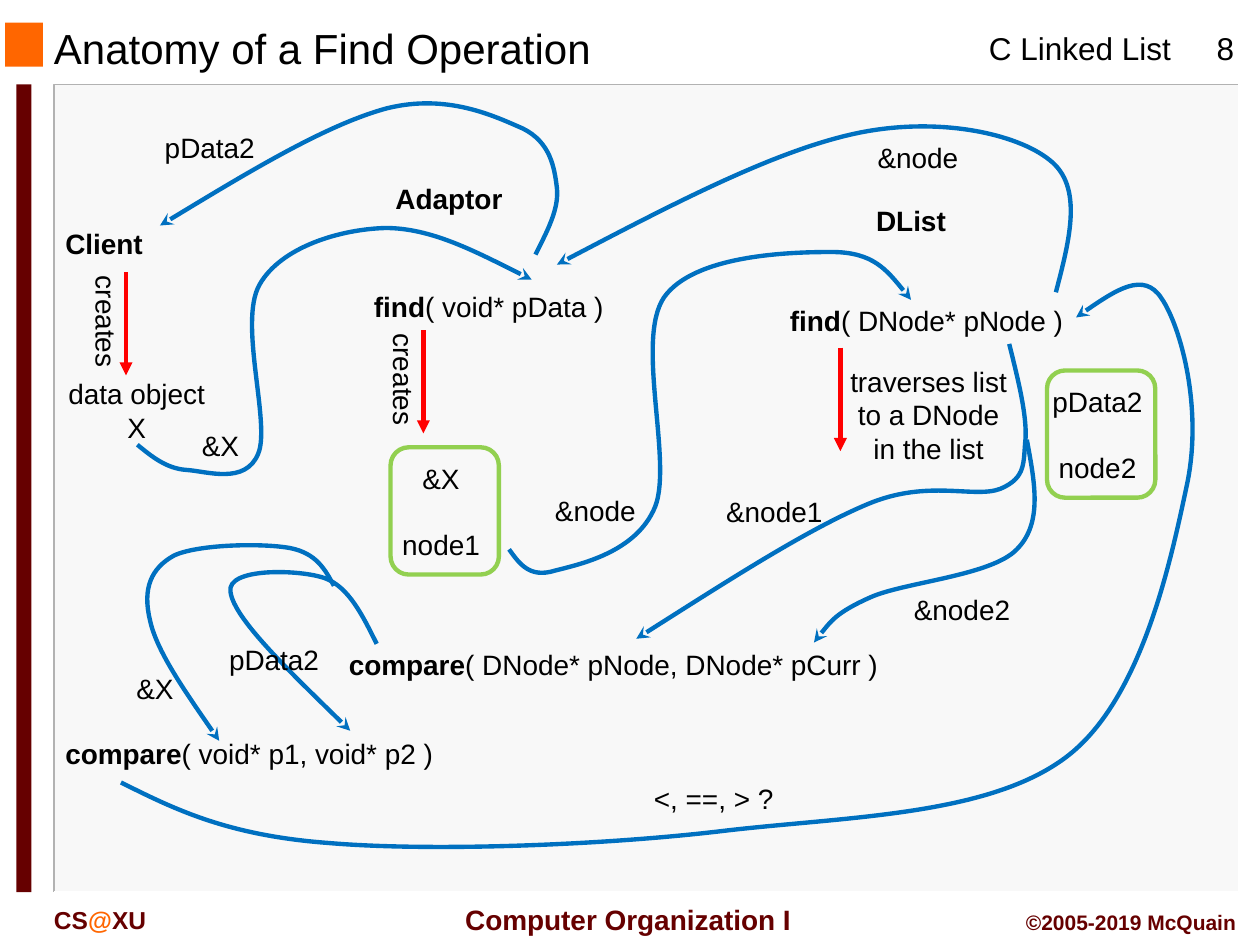
from collections import namedtuple

from lxml.etree import SubElement
from pptx import Presentation
from pptx.dml.color import RGBColor
from pptx.enum.shapes import MSO_CONNECTOR as Link, MSO_SHAPE as Form
from pptx.enum.text import MSO_ANCHOR as Anchor, PP_ALIGN as Align
from pptx.oxml.ns import qn
from pptx.util import Cm, Pt

BLACK = RGBColor(0x00, 0x00, 0x00)
WHITE = RGBColor(0xFF, 0xFF, 0xFF)
PANEL = RGBColor(0xF8, 0xF8, 0xF8)
GREY = RGBColor(0xB2, 0xB2, 0xB2)
ORANGE = RGBColor(0xFF, 0x66, 0x00)
MAROON = RGBColor(0x66, 0x00, 0x00)
GREEN = RGBColor(0x92, 0xD0, 0x50)
RED = RGBColor(0xFF, 0x00, 0x00)
BLUE = RGBColor(0x00, 0x70, 0xC0)

Box = namedtuple("Box", "left top")


def units(*values):
    """Turn grid units of 2.54 cm into lengths."""
    return [Cm(2.54 * value) for value in values]


def place(box, x, y, *size):
    return units(box.left + x, box.top + y, *size)


def add_text(page, where, lines, size=16, color=BLACK, bold=False,
             align=Align.CENTER, wrap=True, anchor=Anchor.TOP, gap=0):
    """Each line is a string or a list of (text, bold, color) spans."""
    shape = page.shapes.add_textbox(*where)
    frame = shape.text_frame
    frame.word_wrap = wrap
    frame.vertical_anchor = anchor
    for index, line in enumerate(lines):
        para = frame.paragraphs[0] if index == 0 else frame.add_paragraph()
        para.alignment = align
        para.font.size, para.font.name = Pt(size), "Arial"
        if index:
            para.space_before = Pt(gap)
        spans = [(line, bold, color)] if isinstance(line, str) else line
        for text, heavy, tint in spans:
            span = para.add_run()
            span.text = text
            span.font.bold = heavy
            span.font.color.rgb = tint
    return shape


def add_block(page, where, color):
    block = page.shapes.add_shape(Form.RECTANGLE, *where)
    block.shadow.inherit = False
    block.fill.solid()
    block.fill.fore_color.rgb = color
    block.line.fill.background()


def style_line(shape, color, width=2.5, arrowhead=None):
    shape.line.color.rgb = color
    shape.line.width = Pt(width)
    if arrowhead:
        SubElement(shape.line._get_or_add_ln(), qn("a:tailEnd"), type=arrowhead)


def add_outline(page, box, points, color, width=2.5, arrowhead=None):
    start, *rest = [place(box, *point) for point in points]
    builder = page.shapes.build_freeform(*start)
    builder.add_line_segments(rest, close=False)
    shape = builder.convert_to_shape()
    shape.shadow.inherit = False
    shape.fill.background()
    style_line(shape, color, width, arrowhead)
    return shape


def add_curve(page, box, points):
    """Start point, then two control points and an end point per segment."""
    shape = add_outline(page, box, points, BLUE, arrowhead="stealth")
    route = next(shape.element.iter(qn("a:path")))
    steps = route.findall(qn("a:lnTo"))
    for first in range(0, len(steps), 3):
        bend = SubElement(route, qn("a:cubicBezTo"))
        for step in steps[first:first + 3]:
            bend.append(step[0])
            route.remove(step)


def add_down_arrow(page, box, x, y):
    arrow = page.shapes.add_connector(
        Link.STRAIGHT, *place(box, x, y), *place(box, x, y + 0.82))
    SubElement(arrow.element.spPr, qn("a:effectLst"))
    arrow.line.color.rgb = RED
    # The line comes before the effects in the shape properties
    style_line(arrow, RED, arrowhead="triangle")


def add_call(page, where, name, arguments=""):
    add_text(page, where, [[(name, True, BLACK), (arguments, False, BLACK)]],
             align=Align.LEFT)


def add_creates(page, box):
    """Red arrow with a turned label on its left."""
    label = add_text(page, place(box, 0, 0.27, 1.05, 0.37), ["creates"],
                     align=Align.LEFT)
    label.rotation = 90
    add_down_arrow(page, box, 0.68, 0)


def add_node(page, box, data, name):
    """Green rounded box with a pointer above a node name."""
    node = page.shapes.add_shape(Form.ROUNDED_RECTANGLE,
                                 *place(box, 0, 0, 0.86, 1.01))
    node.shadow.inherit = False
    node.fill.background()
    style_line(node, GREEN)
    add_text(page, place(box, -0.06, 0.06, 0.92, 0.91), [data, name], gap=19)


def add_frame(page, box):
    # Panel with grey and white edges, and the side bar
    width, height = 9.4, 6.41
    add_block(page, place(box, 0, 0, width, height), PANEL)
    add_outline(page, box, [(width, 0), (0, 0), (0, height)], GREY, 1)
    add_outline(page, box, [(width, 0), (width, height), (0, height)], WHITE, 1)
    add_block(page, place(box, -0.3, 0, 0.12, height), MAROON)


def add_header(page, box):
    add_block(page, place(box, 0, 0, 0.3, 0.35), ORANGE)
    add_text(page, place(box, 0.29, 0.01, 6.33, 0.38),
             ["Anatomy of a Find Operation"], 24, align=Align.LEFT,
             anchor=Anchor.MIDDLE)
    add_text(page, place(box, 7.71, 0, 1.66, 0.4), ["C Linked List"], 18,
             align=Align.LEFT, wrap=False)
    add_text(page, place(box, 9.35, 0, 0.67, 0.4), ["8"], 18)


def add_footer(page, box):
    add_text(page, place(box, 0, 0.02, 1.5, 0.33),
             [[("CS", True, MAROON), ("@", True, ORANGE), ("XU", True, MAROON)]],
             14, align=Align.LEFT)
    add_text(page, place(box, 3.2, 0, 2.91, 0.37), ["Computer Organization I"],
             16, MAROON, True, wrap=False, anchor=Anchor.MIDDLE)
    add_text(page, place(box, 7.5, 0.06, 2.08, 0.3), ["©2005-2019 McQuain"],
             12, MAROON, True, Align.RIGHT)


def add_client(page, box):
    add_call(page, place(box, 0, 0, 0.96, 0.37), "Client")
    add_creates(page, Box(box.left - 0.1, box.top + 0.41))
    add_text(page, place(box, 0, 1.19, 1.33, 0.64), ["data object", "X"])
    add_call(page, place(box, 0, 4.05, 3.36, 0.37),
             "compare", "( void* p1, void* p2 )")


def add_adaptor(page, box):
    add_call(page, place(box, 0.17, 0, 1.12, 0.37), "Adaptor")
    add_call(page, place(box, 0, 0.86, 2.13, 0.37), "find", "( void* pData )")
    add_creates(page, Box(box.left - 0.19, box.top + 1.23))
    add_node(page, Box(box.left + 0.23, box.top + 2.16), "&X", "node1")
    add_call(page, place(box, -0.2, 3.7, 4.54, 0.37),
             "compare", "( DNode* pNode, DNode* pCurr )")


def add_list(page, box):
    add_text(page, place(box, 0.5, 0, 1.12, 0.37), ["DList"], bold=True)
    add_call(page, place(box, 0, 0.79, 2.42, 0.37), "find", "( DNode* pNode )")
    add_down_arrow(page, box, 0.5, 1.19)
    add_text(page, place(box, 0.43, 1.27, 1.54, 0.91),
             ["traverses list to a DNode in the list"])
    add_node(page, Box(box.left + 2.14, box.top + 1.37), "pData2", "node2")


def add_flows(page, box):
    # Data passed along the calls and returns
    curves = [
        [(1.09, 3.53), (1.2, 3.62), (1.32, 3.72), (1.48, 3.73), (1.64, 3.74),
         (1.95, 3.85), (2.05, 3.6), (2.15, 3.36), (1.89, 2.56), (2.06, 2.26),
         (2.23, 1.96), (2.7, 1.82), (3.06, 1.81), (3.42, 1.81), (3.82, 2.02),
         (4.22, 2.22)],
        [(4.04, 4.36), (4.12, 4.47), (4.2, 4.59), (4.4, 4.53), (4.59, 4.48),
         (5.05, 4.39), (5.2, 4.02), (5.34, 3.66), (5.04, 2.7), (5.27, 2.36),
         (5.51, 2.02), (6.28, 2), (6.6, 2), (6.93, 2), (7.08, 2.19), (7.23, 2.38)],
        [(8.01, 2.73), (8.08, 3.01), (8.15, 3.29), (8.14, 3.48), (8.12, 3.67),
         (8.15, 3.79), (7.94, 3.88), (7.73, 3.96), (7.37, 3.8), (6.89, 4),
         (6.41, 4.2), (5.73, 4.64), (5.05, 5.07)],
        [(8.15, 3.49), (8.21, 3.82), (8.28, 4.15), (8.07, 4.36), (7.87, 4.57),
         (7.18, 4.62), (6.91, 4.74), (6.64, 4.86), (6.55, 4.98), (6.46, 5.1)],
        [(2.99, 5.11), (2.88, 4.89), (2.77, 4.66), (2.58, 4.59), (2.39, 4.52),
         (1.79, 4.5), (1.83, 4.7), (1.86, 4.91), (2.32, 5.35), (2.78, 5.8)],
        [(2.65, 4.65), (2.58, 4.52), (2.51, 4.39), (2.3, 4.35), (2.08, 4.31),
         (1.57, 4.32), (1.38, 4.41), (1.2, 4.51), (1.13, 4.67), (1.19, 4.92),
         (1.24, 5.16), (1.49, 5.52), (1.74, 5.88)],
        [(0.96, 6.21), (1.38, 6.42), (1.8, 6.63), (2.6, 6.69), (3.41, 6.76),
         (4.8, 6.71), (5.78, 6.59), (6.75, 6.48), (7.85, 6.47), (8.46, 6.01),
         (9.06, 5.56), (9.29, 4.46), (9.42, 3.85), (9.55, 3.24), (9.37, 2.59),
         (9.22, 2.37), (9.08, 2.15), (8.81, 2.33), (8.54, 2.52)],
        [(8.38, 2.32), (8.49, 1.9), (8.6, 1.48), (8.33, 1.27), (8.07, 1.06),
         (7.44, 0.92), (6.79, 1.06), (6.14, 1.2), (5.28, 1.65), (4.42, 2.1)],
        [(4.25, 2.02), (4.34, 1.84), (4.44, 1.66), (4.42, 1.49), (4.4, 1.33),
         (4.37, 1.13), (4.15, 1.02), (3.92, 0.92), (3.55, 0.74), (3.07, 0.86),
         (2.59, 0.99), (1.93, 1.39), (1.27, 1.79)],
    ]
    for points in curves:
        add_curve(page, box, points)
    labels = [("&X", 1.46, 3.35, 0.58), ("&node", 4.22, 3.87, 1.01),
              ("&node1", 5.64, 3.88, 1.01), ("&node2", 7.13, 4.65, 1.01),
              ("&X", 0.9, 5.28, 0.66), ("pData2", 1.67, 5.05, 1.01),
              ("<, ==, > ?", 5, 6.15, 1.33), ("&node", 6.78, 1.07, 1.01),
              ("pData2", 1.16, 0.99, 1.01)]
    for text, x, y, width in labels:
        add_text(page, place(box, x, y, width, 0.37), [text])


def main():
    deck = Presentation()
    deck.slide_width, deck.slide_height = units(10, 7.5)
    page = deck.slides.add_slide(deck.slide_layouts[6])
    add_frame(page, Box(0.43, 0.67))
    add_header(page, Box(0.04, 0.18))
    add_footer(page, Box(0.33, 7.11))
    add_client(page, Box(0.42, 1.75))
    add_adaptor(page, Box(2.87, 1.39))
    add_list(page, Box(6.17, 1.57))
    add_flows(page, Box(0, 0))
    deck.save("out.pptx")


if __name__ == "__main__":
    main()
